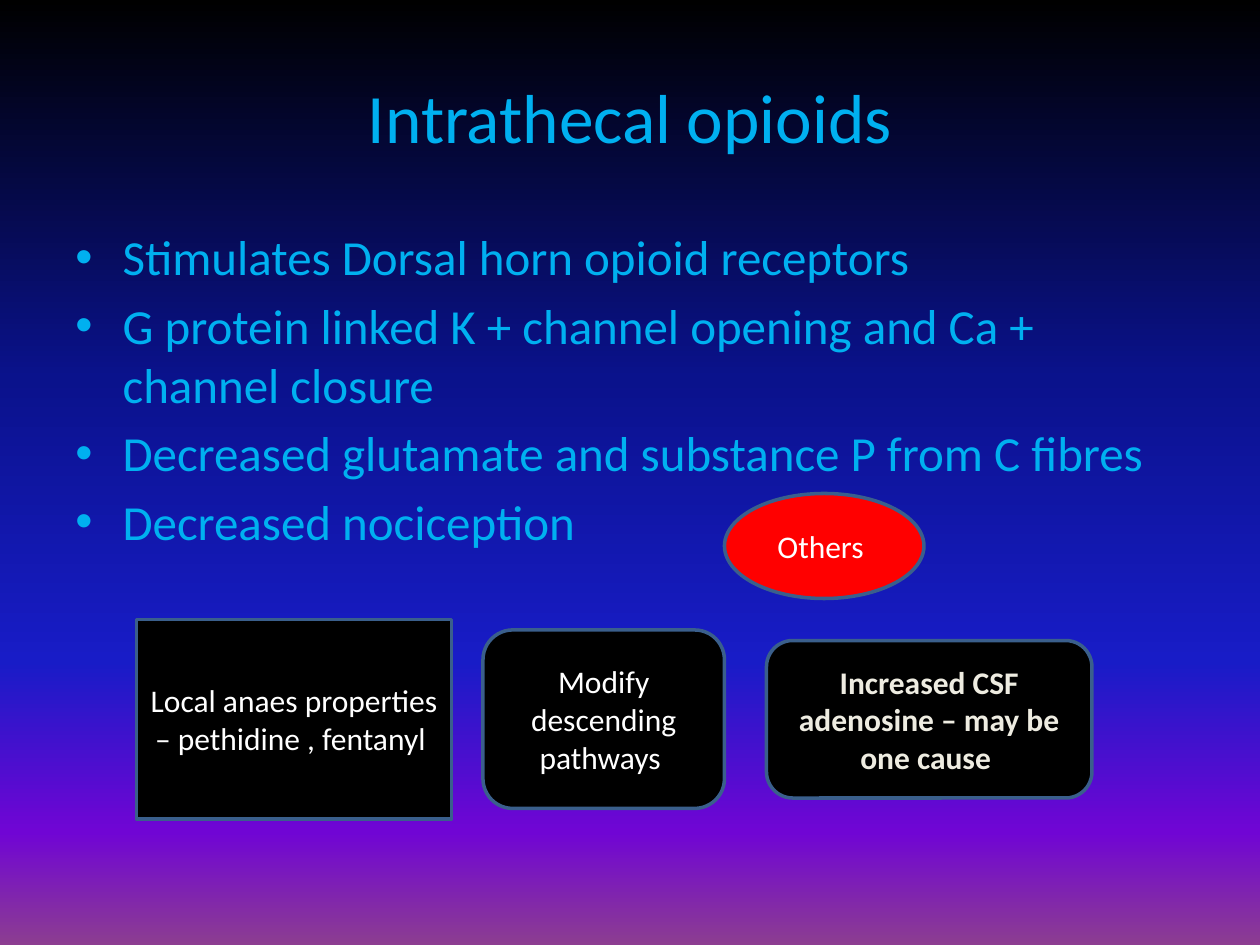
from copy import deepcopy

from lxml import etree
from pptx import Presentation
from pptx.dml.color import RGBColor
from pptx.enum.shapes import MSO_SHAPE
from pptx.enum.text import MSO_ANCHOR, PP_ALIGN
from pptx.oxml.ns import qn
from pptx.util import Pt

RECT, ROUND, OVAL = MSO_SHAPE.RECTANGLE, MSO_SHAPE.ROUNDED_RECTANGLE, MSO_SHAPE.OVAL
MIDDLE, CENTER = MSO_ANCHOR.MIDDLE, PP_ALIGN.CENTER

BLACK = RGBColor(0x00, 0x00, 0x00)
WHITE = RGBColor(0xFF, 0xFF, 0xFF)
CREAM = RGBColor(0xEE, 0xEC, 0xE1)
RED = RGBColor(0xFF, 0x00, 0x00)
SKY = RGBColor(0x00, 0xB0, 0xF0)
STEEL = RGBColor(0x3A, 0x5F, 0x8C)
SHADES = [(0, "000000"), (40, "0A128C"), (70, "181CC7"), (88, "7005D4"), (100, "8C3D91")]

FONT = "Calibri"
TITLE = "Intrathecal opioids"
POINTS = [
    "Stimulates Dorsal horn opioid receptors",
    "G protein linked K + channel opening and Ca + channel closure",
    "Decreased glutamate and substance P from C fibres",
    "Decreased nociception",
]
CARDS = [
    (RECT, 0, 180, 114, "Local anaes properties – pethidine , fentanyl ", WHITE, False),
    (ROUND, 198, 138, 102, "Modify descending pathways ", WHITE, False),
    (ROUND, 360, 186, 90, "Increased CSF adenosine – may be one cause ", CREAM, True),
]


def assign(target, values):
    """Set each named value on the target."""
    for name, value in values.items():
        setattr(target, name, value)


def write(para, text, size, color, bold=False):
    """Put one styled run in a paragraph."""
    run = para.add_run()
    run.text = text
    assign(run.font, {"name": FONT, "size": Pt(size), "bold": bold})
    run.font.color.rgb = color


def shade(slide):
    """Fill the background with a downward gradient."""
    fill = slide.background.fill
    fill.gradient()
    fill.gradient_angle = 270
    stops = slide.element.find(".//" + qn("a:gsLst"))
    model = deepcopy(stops[0])
    for stop in list(stops):
        stops.remove(stop)
    for place, color in SHADES:
        stop = deepcopy(model)
        stop.set("pos", str(place * 1000))
        for child in list(stop):
            stop.remove(child)
        etree.SubElement(stop, qn("a:srgbClr"), val=color)
        stops.append(stop)


def add_frame(slide, box):
    """Add a wrapping text box and return its frame."""
    frame = slide.shapes.add_textbox(*map(Pt, box)).text_frame
    frame.word_wrap = True
    return frame


def add_title(slide, box):
    """Write the centred title."""
    frame = add_frame(slide, box)
    frame.vertical_anchor = MIDDLE
    para = frame.paragraphs[0]
    para.alignment = CENTER
    write(para, TITLE, 39.6, SKY)


def add_list(slide, box):
    """Write the bulleted points."""
    frame = add_frame(slide, box)
    for i, text in enumerate(POINTS):
        para = frame.add_paragraph() if i else frame.paragraphs[0]
        para.space_before = Pt(5.6)
        props = para._p.get_or_add_pPr()
        props.set("marL", str(Pt(27)))
        props.set("indent", str(Pt(-27)))
        etree.SubElement(props, qn("a:buFont"), typeface="Arial")
        etree.SubElement(props, qn("a:buChar"), char="•")
        write(para, text, 28, SKY)


def add_card(slide, kind, box, fill, text, color, bold=False):
    """Add an outlined shape with a centred label."""
    card = slide.shapes.add_shape(kind, *map(Pt, box))
    card.shadow.inherit = False
    card.fill.solid()
    card.fill.fore_color.rgb = fill
    card.line.color.rgb = STEEL
    card.line.width = Pt(2)
    assign(card.text_frame, {"word_wrap": True, "vertical_anchor": MIDDLE})
    para = card.text_frame.paragraphs[0]
    para.alignment = CENTER
    write(para, text, 18, color, bold)


def add_others(slide, box):
    """Place the oval above a row of cards on one middle line."""
    left, top, width, height = box
    middle = top + height - 57
    for kind, shift, wide, high, text, color, bold in CARDS:
        place = (left + shift, middle - high / 2, wide, high)
        add_card(slide, kind, place, BLACK, text, color, bold)
    add_card(slide, OVAL, (left + 336, top, 114, 60), RED, "Others ", WHITE)


def main():
    """Build and save the slide."""
    deck = Presentation()
    assign(deck, {"slide_width": Pt(720), "slide_height": Pt(540)})
    slide = deck.slides.add_slide(deck.slide_layouts[6])
    shade(slide)
    add_title(slide, (36, 42, 648, 48))
    add_list(slide, (36, 126, 648, 356))
    add_others(slide, (78, 282, 546, 186))
    deck.save("out.pptx")


if __name__ == "__main__":
    main()
